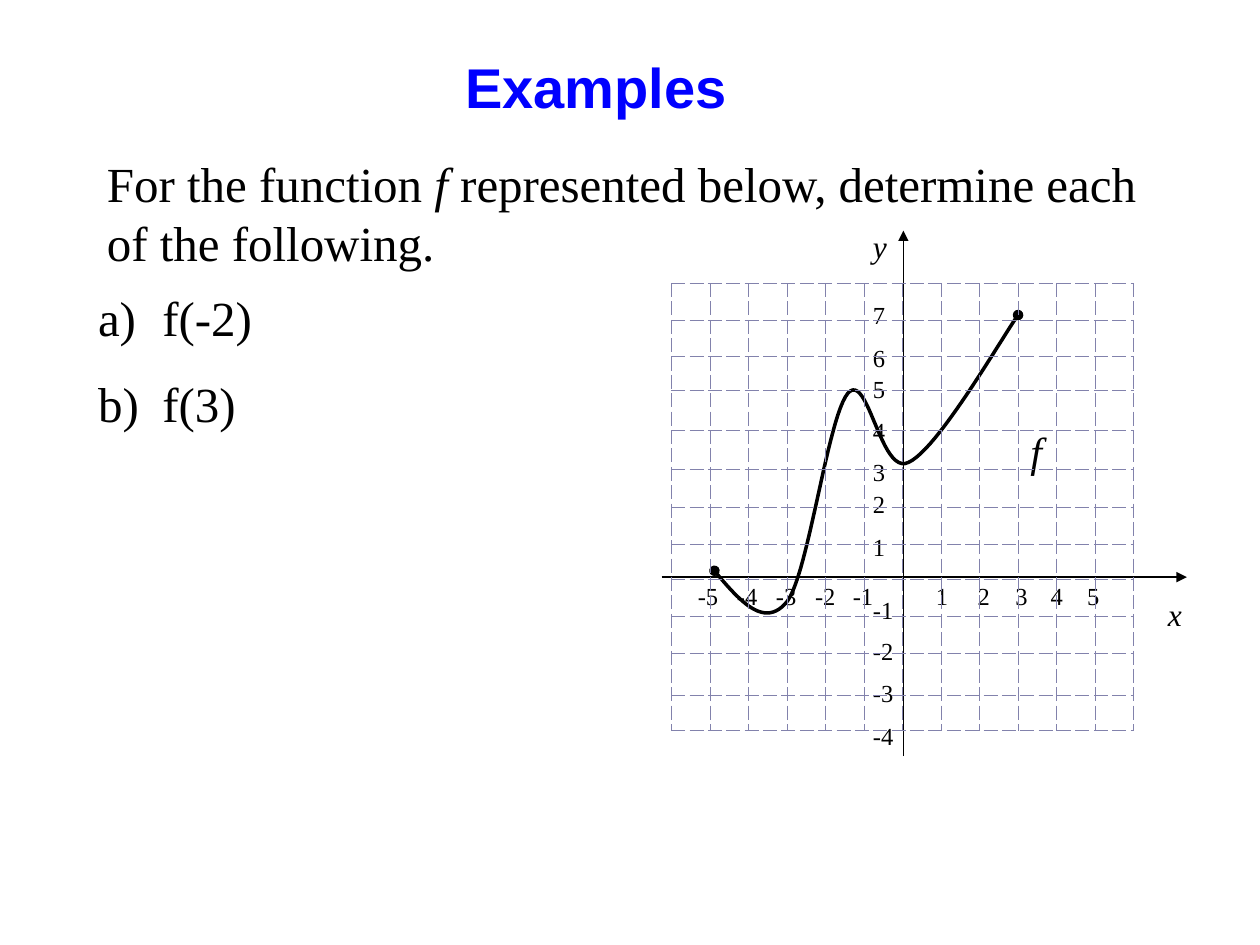
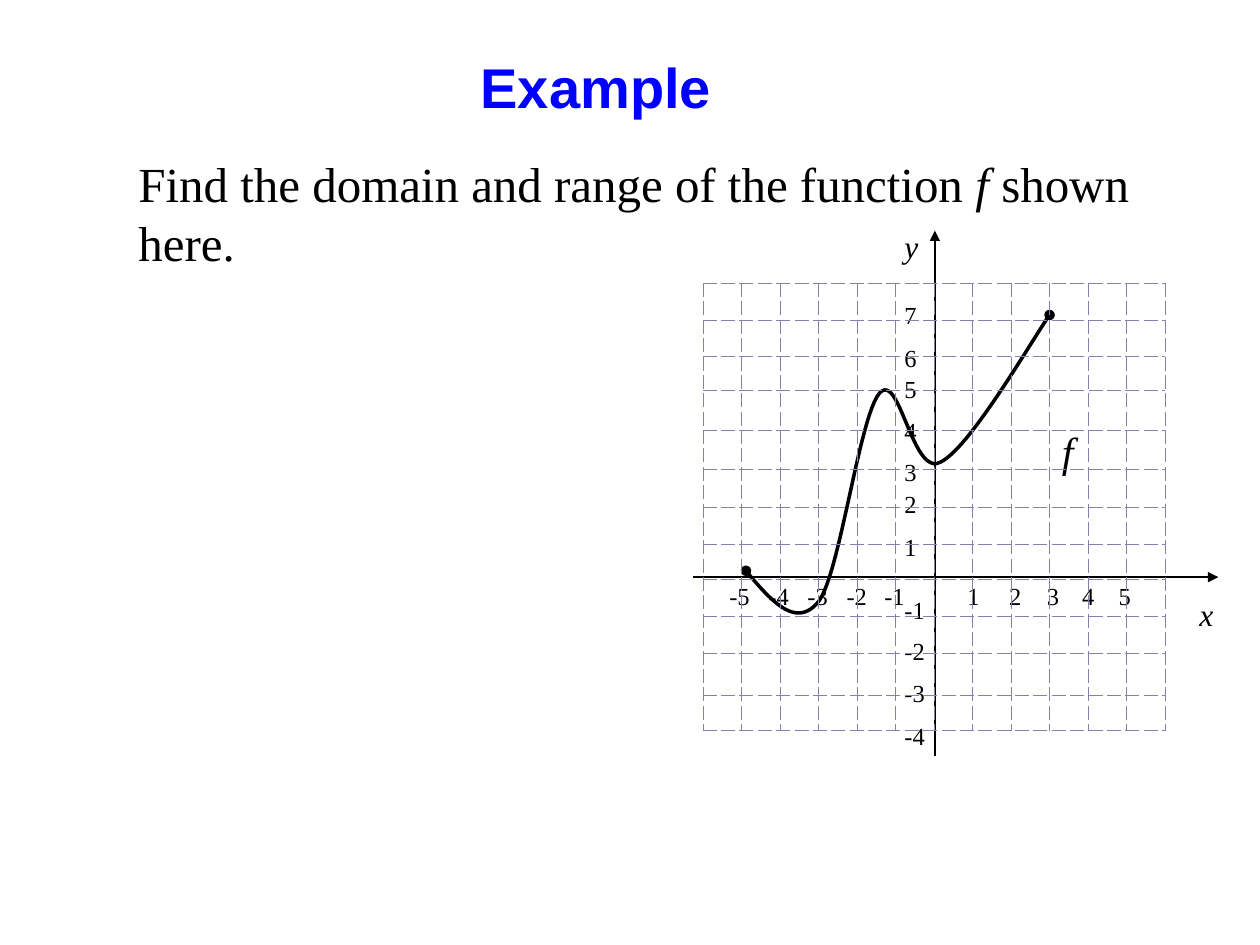
from lxml import etree
from pptx import Presentation
from pptx.dml.color import RGBColor
from pptx.enum.shapes import MSO_CONNECTOR
from pptx.enum.text import MSO_ANCHOR, PP_ALIGN
from pptx.oxml.ns import qn
from pptx.util import Inches, Pt

STRAIGHT = MSO_CONNECTOR.STRAIGHT
TOP = MSO_ANCHOR.TOP
LEFT, CENTER = PP_ALIGN.LEFT, PP_ALIGN.CENTER
BLACK = RGBColor(0x00, 0x00, 0x00)
BLUE = RGBColor(0x00, 0x00, 0xFF)
GRID = RGBColor(0x82, 0x82, 0xAC)
SERIF, SANS = "Times New Roman", "Arial"

TITLE_BOX = (2, 0.37, 5.46, 0.5)
GRAPH_TOP = 1.75
AXIS_X, AXIS_Y = 1.92, 2.83
LABEL_X = 1.58
Y_LABELS = {7: 0.58, 6: 0.92, 5: 1.17, 4: 1.5, 3: 1.83, 2: 2.08, 1: 2.42,
            -1: 2.92, -2: 3.25, -3: 3.58, -4: 3.92}
X_LABELS = {-5: 0.19, -4: 0.5, -3: 0.81, -2: 1.12, -1: 1.42,
            1: 2.08, 2: 2.41, 3: 2.71, 4: 2.99, 5: 3.28}
GRID_COLUMNS, GRID_WIDTH = 12, 3.67
GRID_ROWS = (0.29, 0.29, 0.27, 0.32, 0.31, 0.3, 0.29, 0.28, 0.29, 0.3, 0.33, 0.28)
CURVE_START = (0.42, 2.78)
CURVE_PIECES = (
    ((0.62, 3.02), (0.82, 3.25), (1.0, 3.02)),
    ((1.17, 2.78), (1.32, 1.56), (1.48, 1.37)),
    ((1.64, 1.19), (1.74, 2.03), (1.96, 1.92)),
    ((2.19, 1.82), (2.69, 0.95), (2.83, 0.75)),
)
CURVE_STEPS = 24


def place(shape, box):
    """Move a shape to a box given in inches."""
    shape.left, shape.top, shape.width, shape.height = map(Inches, box)


def write_text(frame, paragraphs, size=14, font=SERIF, color=BLACK, bold=False,
               italic=False, align=LEFT, wrap=True, gap=0, hanging=0, tabs=()):
    """Fill a frame; a paragraph is a string or a list of (text, italic) spans."""
    frame.word_wrap = wrap
    frame.vertical_anchor = TOP
    for number, content in enumerate(paragraphs):
        para = frame.paragraphs[0] if number == 0 else frame.add_paragraph()
        para.alignment = align
        para.space_before = Pt(gap if number else 0)
        properties = para._p.get_or_add_pPr()
        if hanging:
            properties.set("marL", str(Inches(hanging)))
            properties.set("indent", str(-Inches(hanging)))
        if tabs:
            stops = etree.SubElement(properties, qn("a:tabLst"))
            for position in tabs:
                etree.SubElement(stops, qn("a:tab"), pos=str(Inches(position)), algn="l")
        spans = [(content, italic)] if isinstance(content, str) else content
        for text, slanted in spans:
            span = para.add_run()
            span.text = text
            span.font.name = font
            span.font.size = Pt(size)
            span.font.bold = bold
            span.font.italic = slanted
            span.font.color.rgb = color


def add_text(page, box, paragraphs, **style):
    """Add a text box with formatted text."""
    shape = page.shapes.add_textbox(*map(Inches, box))
    write_text(shape.text_frame, paragraphs, **style)


def style_line(shape, width, **ends):
    """Draw a black outline with the given line ends."""
    shape.line.color.rgb = BLACK
    shape.line.width = Pt(width)
    outline = shape.line._get_or_add_ln()
    for end, kind in ends.items():
        etree.SubElement(outline, qn(f"a:{end}"), type=kind)


def add_axis(page, start, finish):
    """Add an axis with an arrowhead at its far end."""
    axis = page.shapes.add_connector(STRAIGHT, *map(Inches, start + finish))
    style_line(axis, 0.75, tailEnd="triangle")
    etree.SubElement(axis._element.spPr, qn("a:effectLst"))


def curve_points():
    """List points along the Bezier pieces of the function curve."""
    points = [CURVE_START]
    for first, second, finish in CURVE_PIECES:
        corners = (points[-1], first, second, finish)
        for step in range(1, CURVE_STEPS + 1):
            t = step / CURVE_STEPS
            weights = ((1 - t) ** 3, 3 * t * (1 - t) ** 2, 3 * t * t * (1 - t), t ** 3)
            points.append(tuple(sum(weight * corner[axis] for weight, corner
                                    in zip(weights, corners)) for axis in (0, 1)))
    return points


def add_curve(page, left, top):
    """Add the function curve with a dot at both ends."""
    points = [(Inches(left + x), Inches(top + y)) for x, y in curve_points()]
    builder = page.shapes.build_freeform(*points[0])
    builder.add_line_segments(points[1:], close=False)
    curve = builder.convert_to_shape()
    curve.fill.background()
    curve.shadow.inherit = False
    style_line(curve, 2, headEnd="oval", tailEnd="oval")


def style_grid_cell(cell):
    """Leave a cell clear and give it dashed borders."""
    cell.margin_left = cell.margin_right = cell.margin_top = cell.margin_bottom = 0
    etree.SubElement(cell.text_frame.paragraphs[0]._p, qn("a:endParaRPr"), sz="800")
    properties = cell._tc.get_or_add_tcPr()
    for side in ("lnL", "lnR", "lnT", "lnB"):
        border = etree.SubElement(properties, qn(f"a:{side}"), w=str(Pt(0.5)))
        fill = etree.SubElement(border, qn("a:solidFill"))
        etree.SubElement(fill, qn("a:srgbClr"), val=str(GRID))
        etree.SubElement(border, qn("a:prstDash"), val="sysDash")
    cell.fill.background()


def add_grid(page, left, top):
    """Add the dashed coordinate grid as a table."""
    box = (left, top, GRID_WIDTH, sum(GRID_ROWS))
    grid = page.shapes.add_table(len(GRID_ROWS), GRID_COLUMNS, *map(Inches, box)).table
    grid.first_row = grid.horz_banding = False
    for column in grid.columns:
        column.width = Inches(GRID_WIDTH / GRID_COLUMNS)
    for row, height in zip(grid.rows, GRID_ROWS):
        row.height = Inches(height)
        for cell in row.cells:
            style_grid_cell(cell)


def add_graph(page, left, top=GRAPH_TOP):
    """Draw axes, labels, curve and grid from the graph's top left corner."""
    add_text(page, (left + LABEL_X, top, 0.33, 0.4), ["y"], size=18, italic=True)
    add_axis(page, (left, top + AXIS_Y), (left + 4.17, top + AXIS_Y))
    add_axis(page, (left + AXIS_X, top + 4.25), (left + AXIS_X, top + 0.08))
    add_text(page, (left + 3.92, top + 2.92, 0.33, 0.4), ["x"], size=18, italic=True)
    numbers = "".join(f"\t{value}" for value in X_LABELS)
    add_text(page, (left, top + 2.81, 3.92, 0.33), [numbers], tabs=X_LABELS.values())
    add_text(page, (left + 2.83, top + 1.58, 0.58, 0.5), ["f"], size=24, italic=True)
    add_curve(page, left, top)
    for value, offset in Y_LABELS.items():
        add_text(page, (left + LABEL_X, top + offset, 0.5, 0.33), [str(value)])
    add_grid(page, left + 0.08, top + 0.5)


def add_example(deck, title, question, question_left, graph_left, parts=()):
    """Add a slide with a title, a question, its parts and the graph."""
    page = deck.slides.add_slide(deck.slide_layouts[5])
    place(page.shapes.title, TITLE_BOX)
    write_text(page.shapes.title.text_frame, [title], size=32, font=SANS, color=BLUE,
               bold=True, align=CENTER, wrap=False)
    add_text(page, (question_left, 1.17, 8.42, 1.03), [question], size=28)
    if parts:
        add_text(page, (0.68, 2.23, 4.39, 1.3), parts, size=28, gap=16, hanging=0.51)
    add_graph(page, graph_left)


def main():
    """Build and save the deck."""
    deck = Presentation()
    deck.slide_width, deck.slide_height = Inches(10), Inches(7.5)
    add_example(deck, "Examples",
                [("For the function ", False), ("f", True),
                 (" represented below, determine each of the following.", False)],
                0.75, 5.25, parts=["a)\tf(-2)", "b)\tf(3)"])
    add_example(deck, "Example",
                [("Find the domain and range of the function ", False), ("f", True),
                 (" shown here.", False)],
                1, 5.5)
    deck.save("out.pptx")


if __name__ == "__main__":
    main()
